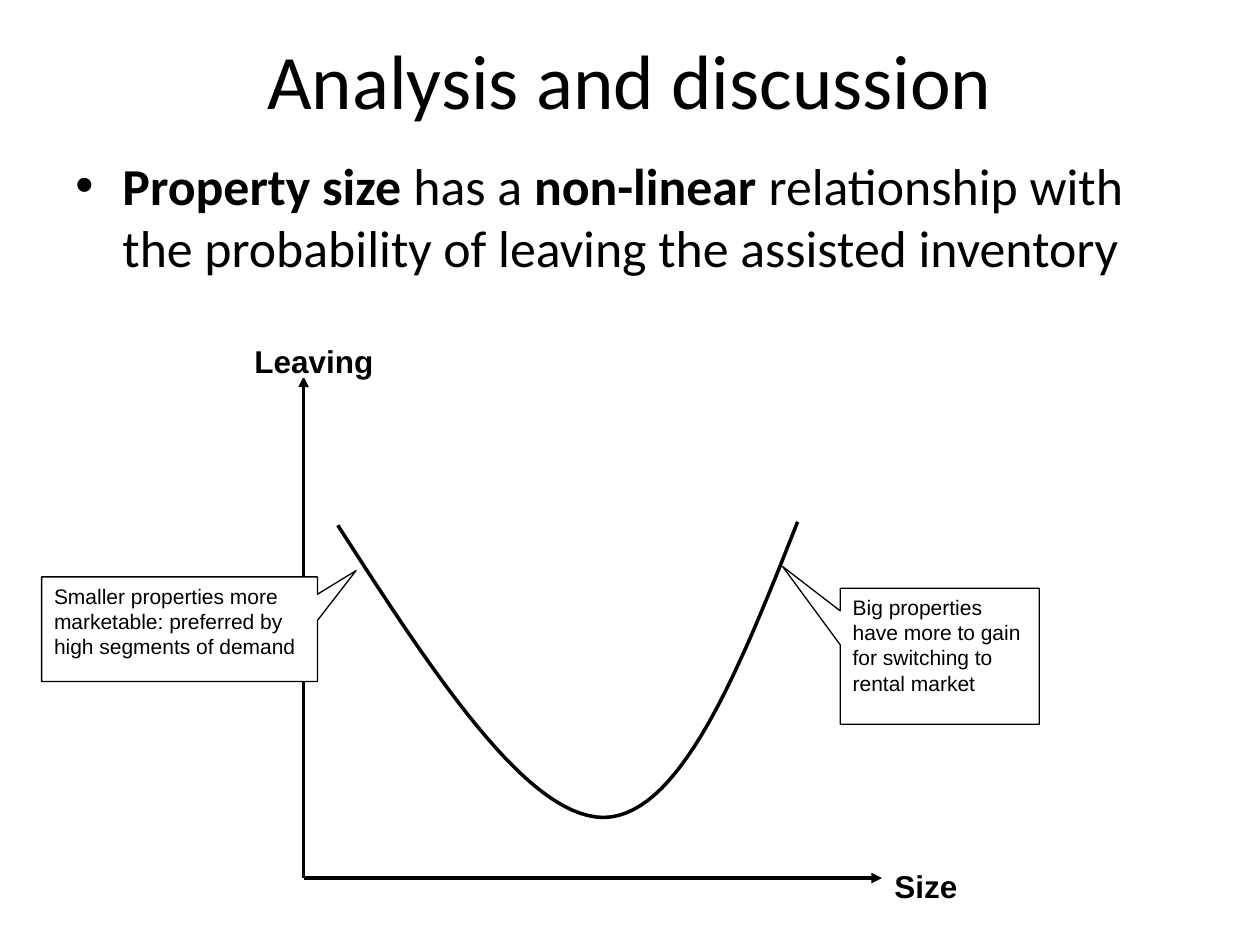
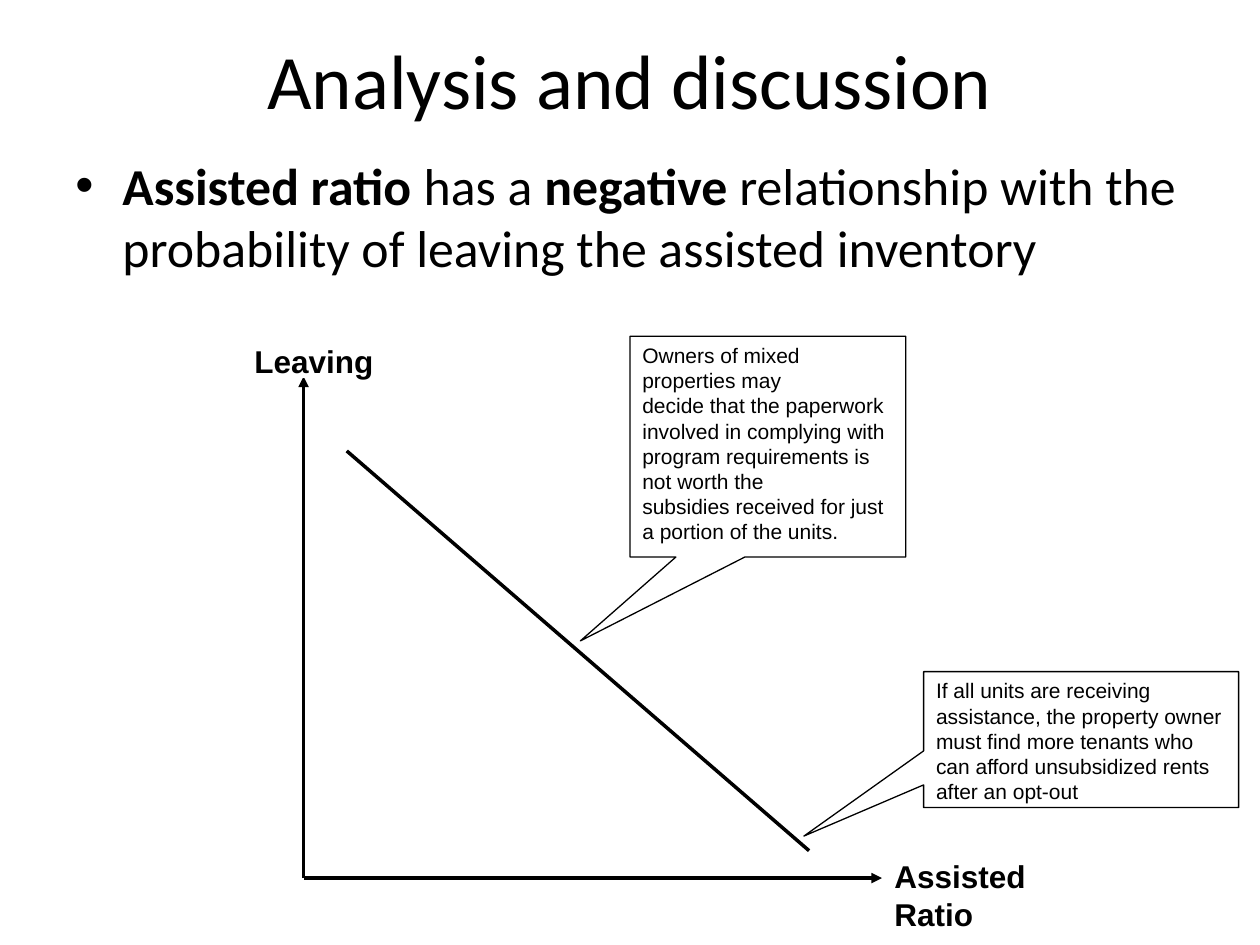
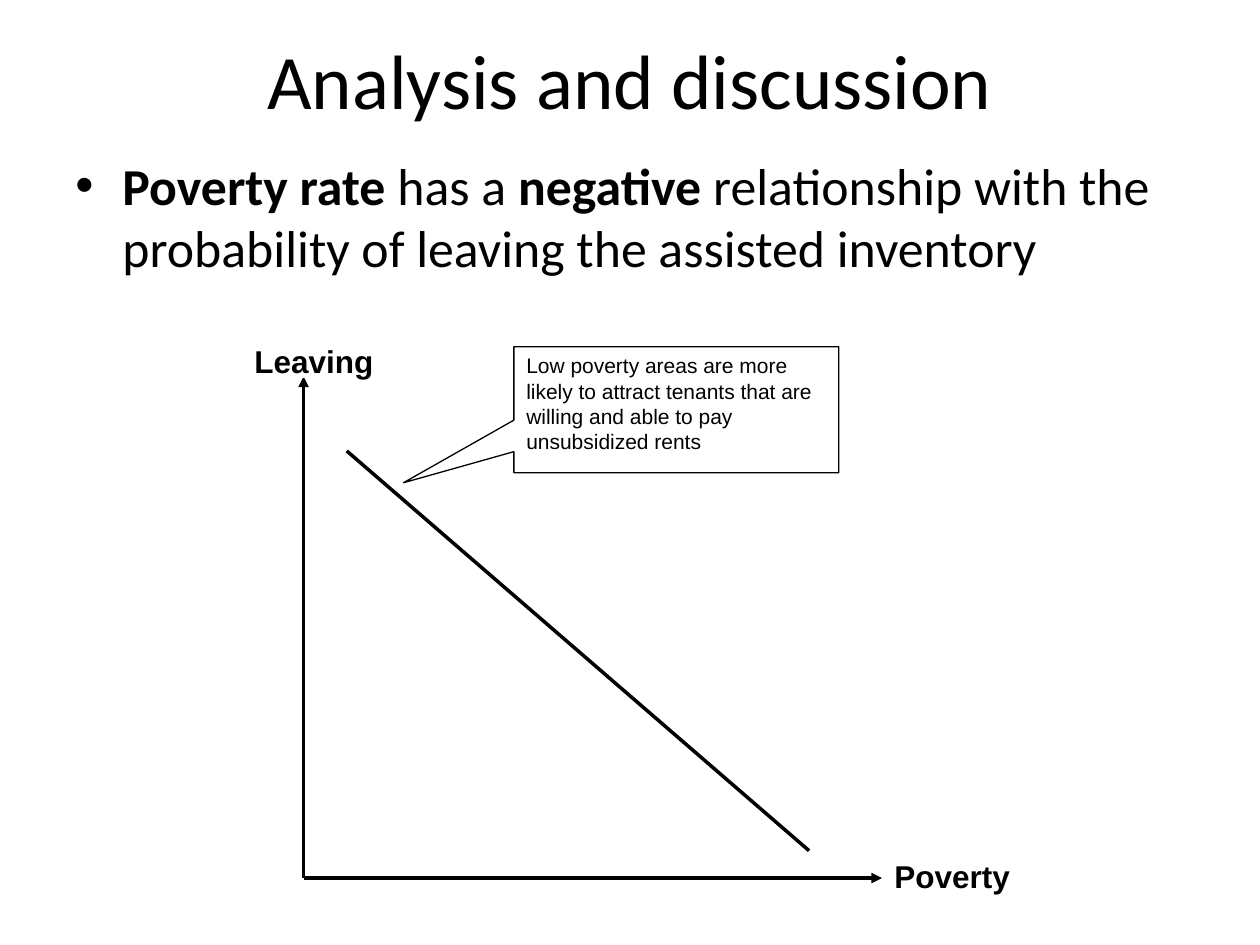
import dataclasses

import lxml.etree
import pptx
import pptx.dml.color
import pptx.enum.shapes
import pptx.enum.text
import pptx.oxml.ns
import pptx.util

Cm = pptx.util.Cm
Pt = pptx.util.Pt
SHAPE = pptx.enum.shapes.MSO_SHAPE
ALIGN = pptx.enum.text.PP_ALIGN
ANCHOR = pptx.enum.text.MSO_ANCHOR
qn = pptx.oxml.ns.qn


@dataclasses.dataclass(frozen=True)
class Theme:
    ink: pptx.dml.color.RGBColor = pptx.dml.color.RGBColor(0, 0, 0)
    paper: pptx.dml.color.RGBColor = pptx.dml.color.RGBColor(255, 255, 255)
    heading_font: str = "Calibri"
    diagram_font: str = "Arial"
    title_size: float = 44
    body_size: float = 29.6
    label_size: float = 18
    callout_size: float = 12
    plot_line: float = 2
    callout_line: float = 0.75


theme = Theme()

# Shared geometry, in centimetres
TITLE_BOX = (1.27, 0, 22.86, 3.18)
BODY_BOX = (1.27, 2.97, 22.86, 3.18)
BULLET_INDENT = 0.95
ORIGIN = (6.12, 17.7)
AXIS_ENDS = [(6.12, 7.59), (17.78, 17.7)]
LEAVING_BOX = (4.88, 6.78, 3.61, 0.84)
X_LABEL_BOX = (17.78, 17.15, 4.65, 1.07)
TREND = [(6.99, 9.09), (16.31, 17.15)]
U_CURVE = [
    [(16.08, 10.52), (14.91, 13.49), (13.72, 16.46), (12.17, 16.48)],
    [(12.17, 16.48), (10.62, 16.48), (8.71, 13.54), (6.81, 10.59)],
]
CURVE_STEPS = 30

# Each callout: box, pointer adjustments, paragraphs
slides = [
    {
        "factor": "Property size ",
        "relation": "non-linear",
        "x_label": "Size",
        "x_label_box": (17.78, 17.35, 2.74, 0.71),
        "curved": True,
        "callouts": [
            ((0.84, 11.63, 5.56, 2.11), (0.64, -0.56),
             ["Smaller properties more marketable: preferred by high "
              "segments of demand"]),
            ((16.94, 11.86, 4.01, 2.74), (-0.79, -0.66),
             ["Big properties have more to gain for switching to rental "
              "market"]),
        ],
    },
    {
        "factor": "Assisted ratio ",
        "relation": "negative",
        "x_label": "Assisted Ratio",
        "x_label_box": X_LABEL_BOX,
        "curved": False,
        "callouts": [
            ((12.7, 6.78, 5.56, 4.45), (-0.68, 0.88),
             ["Owners of mixed properties may",
              "decide that the paperwork involved in complying with program "
              "requirements is not worth the",
              "subsidies received for just a portion of the units."]),
            ((18.62, 13.54, 6.35, 2.74), (-0.88, 0.71),
             ["If all units are receiving",
              "assistance, the property owner must find more tenants who can "
              "afford unsubsidized rents after an opt-out"]),
        ],
    },
    {
        "factor": "Poverty rate ",
        "relation": "negative",
        "x_label": "Poverty",
        "x_label_box": X_LABEL_BOX,
        "curved": False,
        "callouts": [
            ((10.36, 6.99, 6.55, 2.54), (-0.84, 0.58),
             ["Low poverty areas are more likely to attract tenants that are "
              "willing and able to pay unsubsidized rents"]),
        ],
    },
]


def write(sp, paragraphs, font, size, align=ALIGN.LEFT, anchor=ANCHOR.TOP):
    """Fill a shape with paragraphs, each a list of (text, bold) runs."""
    tf = sp.text_frame
    tf.word_wrap = True
    tf.vertical_anchor = anchor
    for i, runs in enumerate(paragraphs):
        p = tf.add_paragraph() if i else tf.paragraphs[0]
        p.alignment = align
        for text, bold in runs:
            r = p.add_run()
            r.text = text
            r.font.name = font
            r.font.size = Pt(size)
            r.font.bold = bold
            r.font.color.rgb = theme.ink


def add_line(s, start, end, arrow=False):
    cx = s.shapes.add_connector(
        pptx.enum.shapes.MSO_CONNECTOR.STRAIGHT,
        *[Cm(v) for v in (*start, *end)])
    cx.line.color.rgb = theme.ink
    cx.line.width = Pt(theme.plot_line)
    if arrow:
        lxml.etree.SubElement(cx.line._get_or_add_ln(), qn("a:tailEnd"),
                              type="triangle")
    lxml.etree.SubElement(cx._element.spPr, qn("a:effectLst"))


prs = pptx.Presentation()
prs.slide_width = Cm(25.4)
prs.slide_height = Cm(19.05)

for content in slides:
    s = prs.slides.add_slide(prs.slide_layouts[6])

    title = s.shapes.add_textbox(*[Cm(v) for v in TITLE_BOX])
    write(title, [[("Analysis and discussion", False)]], theme.heading_font,
          theme.title_size, ALIGN.CENTER, ANCHOR.MIDDLE)

    body = s.shapes.add_textbox(*[Cm(v) for v in BODY_BOX])
    write(body, [[
        (content["factor"], True),
        ("has a ", False),
        (content["relation"], True),
        (" relationship with the probability of leaving the assisted "
         "inventory", False),
    ]], theme.heading_font, theme.body_size)
    pPr = body.text_frame.paragraphs[0]._p.get_or_add_pPr()
    pPr.set("marL", str(Cm(BULLET_INDENT)))
    pPr.set("indent", str(-Cm(BULLET_INDENT)))
    lxml.etree.SubElement(pPr, qn("a:buFont"), typeface=theme.diagram_font)
    lxml.etree.SubElement(pPr, qn("a:buChar"), char="•")

    for end in AXIS_ENDS:
        add_line(s, ORIGIN, end, arrow=True)

    for box, pointer, paragraphs in content["callouts"]:
        sp = s.shapes.add_shape(SHAPE.RECTANGULAR_CALLOUT,
                                *[Cm(v) for v in box])
        sp.shadow.inherit = False
        sp.adjustments[0], sp.adjustments[1] = pointer
        sp.fill.solid()
        sp.fill.fore_color.rgb = theme.paper
        sp.line.color.rgb = theme.ink
        sp.line.width = Pt(theme.callout_line)
        write(sp, [[(text, False)] for text in paragraphs],
              theme.diagram_font, theme.callout_size)

    for text, box in [(content["x_label"], content["x_label_box"]),
                      ("Leaving", LEAVING_BOX)]:
        sp = s.shapes.add_shape(SHAPE.RECTANGLE, *[Cm(v) for v in box])
        sp.shadow.inherit = False
        sp.fill.solid()
        sp.fill.fore_color.rgb = theme.paper
        sp.line.fill.background()
        write(sp, [[(text, True)]], theme.diagram_font, theme.label_size)

    if content["curved"]:
        points = []
        for a, b, c, d in U_CURVE:
            for step in range(CURVE_STEPS + 1):
                t = step / CURVE_STEPS
                u = 1 - t
                points.append([
                    Cm(u**3 * a[k] + 3 * u**2 * t * b[k]
                       + 3 * u * t**2 * c[k] + t**3 * d[k])
                    for k in (0, 1)])
        builder = s.shapes.build_freeform(*points[0])
        builder.add_line_segments(points[1:], close=False)
        curve = builder.convert_to_shape()
        curve.shadow.inherit = False
        curve.fill.background()
        curve.line.color.rgb = theme.ink
        curve.line.width = Pt(theme.plot_line)
    else:
        add_line(s, *TREND)

prs.save("out.pptx")
